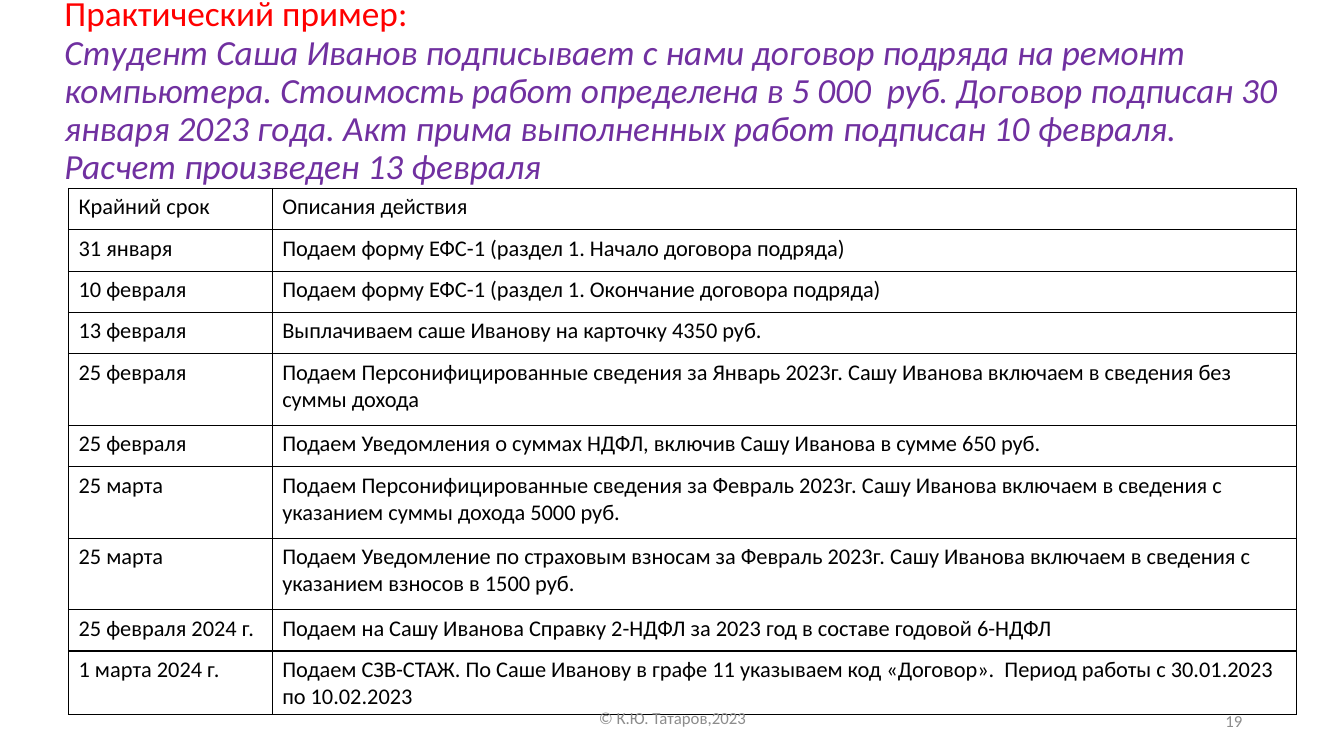
import pptx
import pptx.util
import pptx.dml.color
import pptx.enum.text
import pptx.oxml
import pptx.oxml.ns
from lxml import etree

Inches, Pt = pptx.util.Inches, pptx.util.Pt
RGBColor = pptx.dml.color.RGBColor
PP_ALIGN = pptx.enum.text.PP_ALIGN
ANCHOR = pptx.enum.text.MSO_ANCHOR

# Content
HEADING = "Практический пример:"
CASE = ("Студент Саша Иванов подписывает с нами договор подряда на ремонт "
        "компьютера. Стоимость работ определена в 5 000  руб. Договор подписан "
        "30 января 2023 года. Акт прима выполненных работ подписан 10 февраля. "
        "Расчет произведен 13 февраля")
# (deadline, action, row height in inches)
SCHEDULE = [
    ("Крайний срок", "Описания действия", 0.41),
    ("31 января", "Подаем форму ЕФС-1 (раздел 1. Начало договора подряда)", 0.41),
    ("10 февраля", "Подаем форму ЕФС-1 (раздел 1. Окончание договора подряда)", 0.41),
    ("13 февраля", "Выплачиваем саше Иванову на карточку 4350 руб.", 0.41),
    ("25 февраля", "Подаем Персонифицированные сведения за Январь 2023г. "
     "Сашу Иванова включаем в сведения без суммы дохода", 0.71),
    ("25 февраля", "Подаем Уведомления о суммах НДФЛ, включив Сашу Иванова "
     "в сумме 650 руб.", 0.41),
    ("25 марта", "Подаем Персонифицированные сведения за Февраль 2023г. "
     "Сашу Иванова включаем в сведения с указанием суммы дохода 5000 руб.", 0.71),
    ("25 марта", "Подаем Уведомление по страховым взносам за Февраль 2023г. "
     "Сашу Иванова включаем в сведения с указанием взносов в 1500 руб.", 0.71),
    ("25 февраля 2024 г.", "Подаем на Сашу Иванова Справку 2-НДФЛ за 2023 год "
     "в составе годовой 6-НДФЛ", 0.41),
    ("1 марта 2024 г.", "Подаем СЗВ-СТАЖ. По Саше Иванову в графе 11 указываем код "
     "«Договор».  Период работы с 30.01.2023 по 10.02.2023", 0.61),
]
COLUMN_WIDTHS = (2.02, 10.16)
CREDIT = "© К.Ю. Татаров,2023"
PAGE_NUMBER = "19"

FONT = "Calibri"
RED = RGBColor(0xFF, 0x00, 0x00)
PURPLE = RGBColor(0x70, 0x30, 0xA0)
BLACK = RGBColor(0x00, 0x00, 0x00)
GREY = RGBColor(0x8C, 0x8C, 0x8C)


def add_run(paragraph, text, size, color, italic=False):
    run = paragraph.add_run()
    run.text = text
    run.font.name = FONT
    run.font.size = Pt(size)
    run.font.color.rgb = color
    run.font.italic = italic


def add_text_frame(slide, left, top, width, height):
    box = slide.shapes.add_textbox(*map(Inches, (left, top, width, height)))
    frame = box.text_frame
    frame.word_wrap = True
    frame.vertical_anchor = ANCHOR.MIDDLE
    return frame


def border_cell(cell):
    properties = cell._tc.get_or_add_tcPr()
    for position, side in enumerate(("lnL", "lnR", "lnT", "lnB")):
        line = etree.Element(pptx.oxml.ns.qn("a:" + side), w=str(Pt(1)))
        fill = etree.SubElement(line, pptx.oxml.ns.qn("a:solidFill"))
        etree.SubElement(fill, pptx.oxml.ns.qn("a:srgbClr"), val=str(BLACK))
        properties.insert(position, line)


def add_title(slide):
    title = add_text_frame(slide, 0.54, 0, 12.31, 1.82).paragraphs[0]
    title.line_spacing = 0.9
    add_run(title, HEADING, 25.2, RED)
    title.add_line_break()
    add_run(title, CASE, 25.2, PURPLE, italic=True)


def add_schedule(slide):
    total_height = sum(height for _, _, height in SCHEDULE)
    table = slide.shapes.add_table(
        len(SCHEDULE), len(COLUMN_WIDTHS), Inches(0.68), Inches(1.87),
        Inches(sum(COLUMN_WIDTHS)), Inches(total_height)).table
    table.first_row = table.horz_banding = False
    for column, width in zip(table.columns, COLUMN_WIDTHS):
        column.width = Inches(width)
    for row, (deadline, action, height) in zip(table.rows, SCHEDULE):
        row.height = Inches(height)
        for cell, text in zip(row.cells, (deadline, action)):
            cell.fill.background()
            border_cell(cell)
            add_run(cell.text_frame.paragraphs[0], text, 16, BLACK)


def add_footer(slide):
    for text, left, width, height, alignment in (
            (CREDIT, 4.42, 4.5, 0.34, PP_ALIGN.CENTER),
            (PAGE_NUMBER, 9.42, 3, 0.4, PP_ALIGN.RIGHT)):
        paragraph = add_text_frame(slide, left, 6.95, width, height).paragraphs[0]
        paragraph.alignment = alignment
        add_run(paragraph, text, 12, GREY)


def main():
    deck = pptx.Presentation()
    deck.slide_width, deck.slide_height = Inches(13.33), Inches(7.5)
    slide = deck.slides.add_slide(deck.slide_layouts[6])
    add_title(slide)
    add_schedule(slide)
    add_footer(slide)
    deck.save("out.pptx")


if __name__ == "__main__":
    main()
